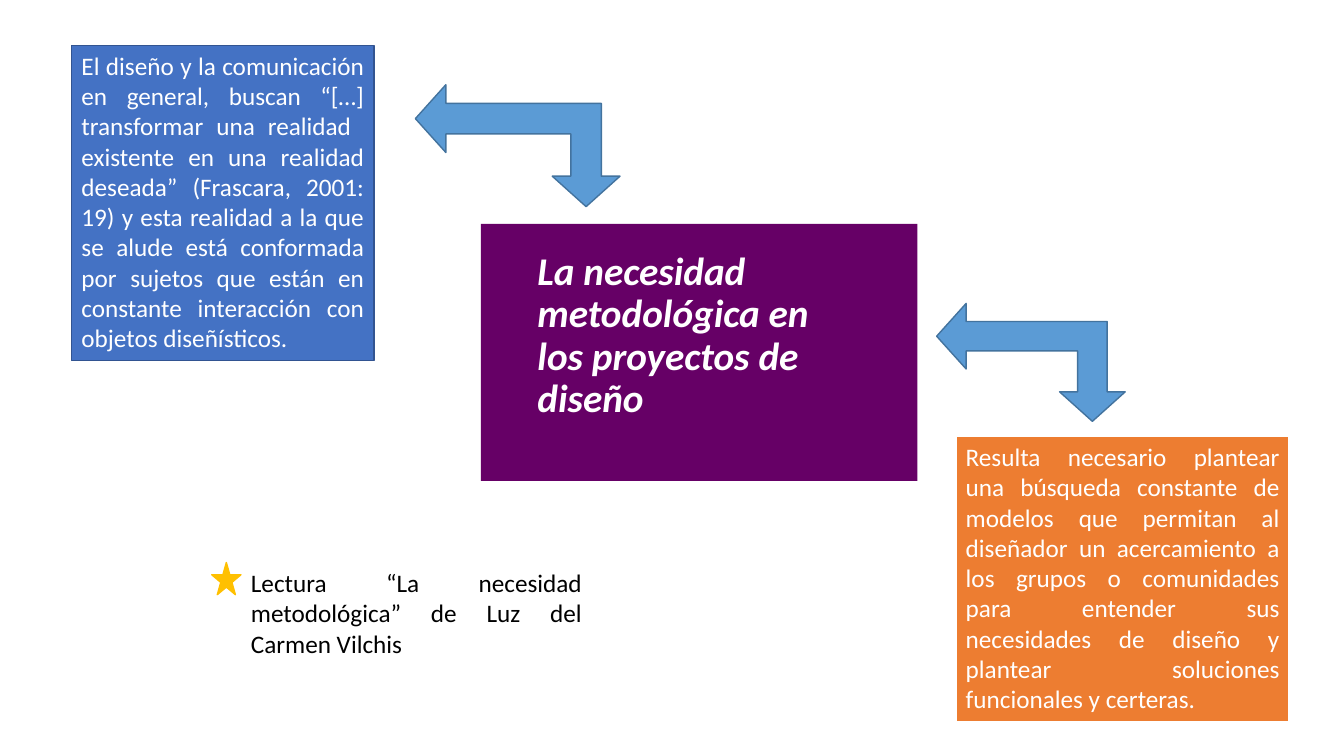
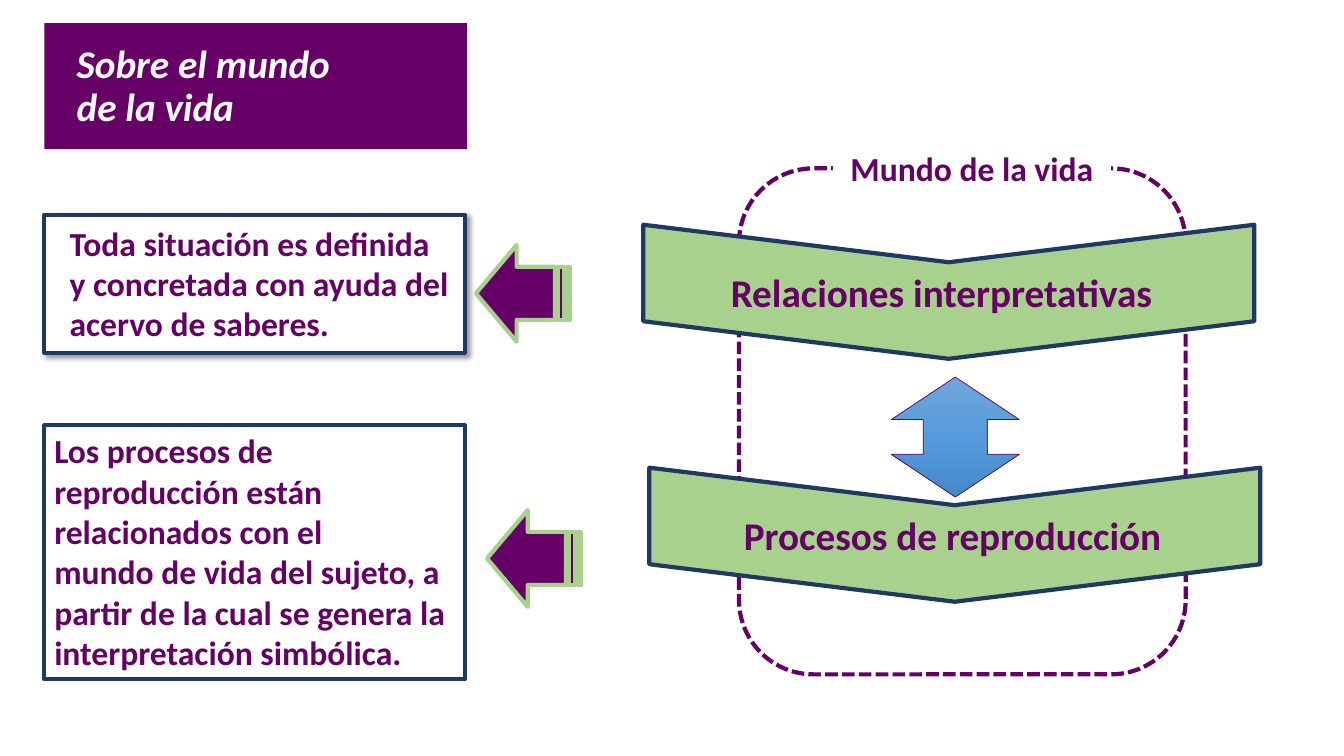
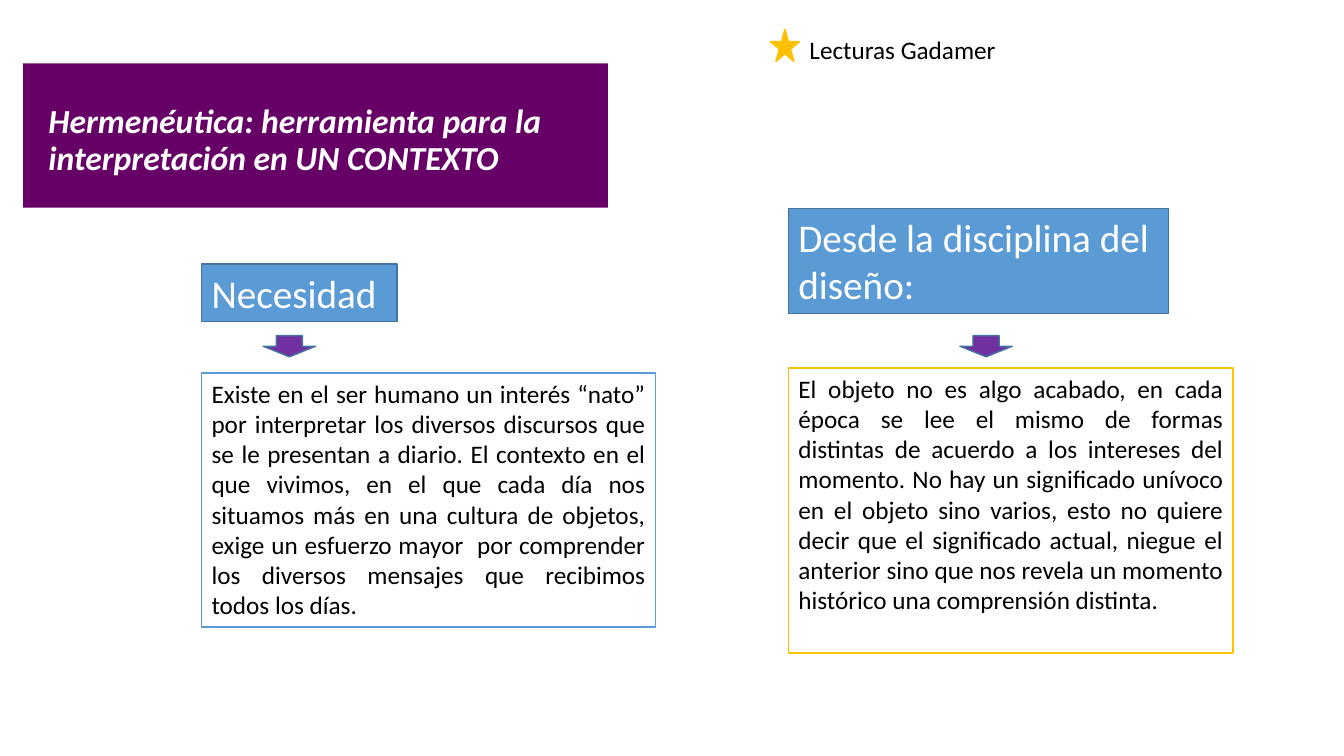
from copy import deepcopy

from lxml import etree
from pptx import Presentation
from pptx import util as u
from pptx.dml.color import RGBColor
from pptx.enum import dml, shapes, text
from pptx.oxml import ns, parse_xml

PX = 9144  # EMU in one px, 100 px to the inch
FONT = "Calibri"
INSET_X, INSET_Y = 10, 5
COLORS = {
    "purple": "660066", "violet": "7030A0", "white": "FFFFFF", "black": "000000",
    "royal": "4472C4", "royal_edge": "325491", "blue": "5B9BD5", "blue_edge": "43739E",
    "navy": "203864", "orange": "ED7D31", "gold": "FFC000", "green": "A9D18E",
    "sky_top": "71A6DB", "sky_middle": "559BDB", "sky_bottom": "448ACA",
}
SHAPE = shapes.MSO_SHAPE
LEFT, CENTER, JUSTIFY = text.PP_ALIGN.LEFT, text.PP_ALIGN.CENTER, text.PP_ALIGN.JUSTIFY


def px(*lengths):
    return [u.Emu(length * PX) for length in lengths]


def rgb(name):
    return RGBColor.from_string(COLORS[name])


def add_shape(slide, kind, box, fill=None, line=None, width=1, adjust=(), rotation=0):
    """Place a preset shape so that, after its rotation, it covers the box."""
    left, top, wide, high = px(*box)
    if rotation in (90, 270):
        left, top = left + (wide - high) // 2, top + (high - wide) // 2
        wide, high = high, wide
    shape = slide.shapes.add_shape(kind, left, top, wide, high)
    shape.rotation = rotation
    shape.shadow.inherit = False
    for index, value in enumerate(adjust):
        shape.adjustments[index] = value
    if fill:
        shape.fill.solid()
        shape.fill.fore_color.rgb = rgb(fill)
    else:
        shape.fill.background()
    if line:
        shape.line.color.rgb = rgb(line)
        shape.line.width = u.Pt(width)
    else:
        shape.line.fill.background()
    return shape


def write(shape, content, size, color, bold=False, italic=False, align=LEFT,
          anchor=text.MSO_ANCHOR.TOP, spacing=1.0,
          insets=(INSET_X, INSET_Y, INSET_X, INSET_Y)):
    frame = shape.text_frame
    frame.text = content
    frame.word_wrap = True
    frame.auto_size = text.MSO_AUTO_SIZE.NONE
    frame.vertical_anchor = anchor
    (frame.margin_left, frame.margin_top,
     frame.margin_right, frame.margin_bottom) = px(*insets)
    for paragraph in frame.paragraphs:
        paragraph.alignment = align
        paragraph.line_spacing = spacing
        for run in paragraph.runs:
            run.font.name = FONT
            run.font.size = u.Pt(size)
            run.font.bold = bold
            run.font.italic = italic
            run.font.color.rgb = rgb(color)


def add_label(slide, box, content, size, color, **style):
    write(slide.shapes.add_textbox(*px(*box)), content, size, color, **style)


def add_titled_slide(presentation, content, size, band, area):
    """Add a slide whose title fills the band and keeps its text in the area."""
    slide = presentation.slides.add_slide(presentation.slide_layouts[5])
    title = slide.shapes.title
    title.left, title.top, title.width, title.height = px(*band)
    title.fill.solid()
    title.fill.fore_color.rgb = rgb("purple")
    left, top = area[0] - band[0], area[1] - band[1]
    insets = (left + INSET_X, top + INSET_Y,
              band[2] - left - area[2] + INSET_X, band[3] - top - area[3] + INSET_Y)
    write(title, content, size, "white", bold=True, italic=True, spacing=0.9,
          anchor=text.MSO_ANCHOR.MIDDLE, insets=insets)
    return slide


def add_card(slide, box, content, size, color, fill, line, width=1, **style):
    card = add_shape(slide, SHAPE.RECTANGLE, box, fill, line, width)
    write(card, content, size, color, **style)
    return card


def add_reading(slide, left, top, height, content):
    """Add a reading reference marked with a star."""
    add_label(slide, (left + 29, top, 348, height), content, 18, "black", align=JUSTIFY)
    add_shape(slide, SHAPE.STAR_5_POINT, (left, top, 29, 32), "gold", "gold")


def add_banner(slide, left, top, indent, content):
    """Add a chevron pointing down with a caption indented from its left edge."""
    add_shape(slide, SHAPE.CHEVRON, (left, top, 606, 133), "green", "navy", 3,
              adjust=[0.28], rotation=90)
    add_label(slide, (left + indent, top + 38, 457, 57), content, 28, "purple", bold=True)


def add_column(slide, heading_box, heading, arrow_left, body_box, body, edge):
    """Add a heading, a down arrow and the text it leads to."""
    add_card(slide, heading_box, heading, 28, "white", "blue", "blue_edge")
    add_shape(slide, SHAPE.DOWN_ARROW, (arrow_left, 333, 52, 21), "violet", "blue_edge")
    add_card(slide, body_box, body, 18, "black", "white", edge, align=JUSTIFY)


def add_card_shadow(card):
    effects = card._element.spPr.find(ns.qn("a:effectLst"))
    effects.append(parse_xml(
        f'<a:outerShdw {ns.nsdecls("a")} blurRad="{u.Pt(4)}" dist="{u.Pt(3)}" '
        f'dir="2700000" algn="tl" rotWithShape="0"><a:srgbClr val="{COLORS["black"]}">'
        '<a:alpha val="40000"/></a:srgbClr></a:outerShdw>'))


def set_named_guides(shape, **guides):
    """Set adjustments by name, where python-pptx does not list them one to one."""
    guide_list = shape._element.spPr.find(".//" + ns.qn("a:avLst"))
    for guide in list(guide_list):
        guide_list.remove(guide)
    for name, value in guides.items():
        etree.SubElement(guide_list, ns.qn("a:gd"), name=name, fmla=f"val {value}")


def fill_with_sky(shape):
    """Fill with a three-stop gradient from top to bottom."""
    shape.fill.gradient()
    shape.fill.gradient_angle = 270
    stops = shape._element.spPr.find(".//" + ns.qn("a:gsLst"))
    stops.insert(1, deepcopy(stops[0]))
    names = ("sky_top", "sky_middle", "sky_bottom")
    for index, (stop, name) in enumerate(zip(shape.fill.gradient_stops, names)):
        stop.color.rgb = rgb(name)
        stop.position = index / 2


def build_need_slide(presentation):
    slide = add_titled_slide(
        presentation, "La necesidad metodológica en los proyectos de diseño", 28,
        (477, 222, 433, 255), (523, 222, 321, 223))
    add_card(
        slide, (71, 45, 300, 313),
        "El diseño y la comunicación en general, buscan “[…] transformar una realidad  "
        "existente en una realidad deseada” (Frascara, 2001: 19) y esta realidad a la que "
        "se alude está conformada por sujetos que están en constante interacción con "
        "objetos diseñísticos.", 18, "white", "royal", "royal_edge", align=JUSTIFY)
    add_card(
        slide, (948, 433, 331, 283),
        "Resulta necesario plantear una búsqueda constante de modelos que permitan al "
        "diseñador un acercamiento a los grupos o comunidades para entender sus "
        "necesidades de diseño y plantear soluciones funcionales y certeras.",
        18, "white", "orange", "white", 1.5, align=JUSTIFY)
    for box in ((412, 84, 203, 121), (929, 301, 187, 117)):
        add_shape(slide, SHAPE.LEFT_UP_ARROW, box, "blue", "blue_edge",
                  adjust=[0.25, 0.278, 0.25], rotation=270)
    add_reading(slide, 210, 558, 101,
                "Lectura “La necesidad metodológica” de Luz del Carmen Vilchis")


def build_life_world_slide(presentation):
    slide = add_titled_slide(presentation, "Sobre el mundo\nde la vida", 28,
                             (44, 23, 419, 125), (66, 39, 370, 95))
    frame = add_shape(slide, SHAPE.ROUNDED_RECTANGLE, (733, 167, 443, 502),
                      line="purple", width=3)
    frame.line.dash_style = dml.MSO_LINE.SQUARE_DOT

    card_style = dict(size=24, color="purple", fill="white", line="navy", width=3, bold=True)
    situation = add_card(
        slide, (44, 213, 417, 137),
        "Toda situación es definida y concretada con ayuda del acervo de saberes.",
        insets=(25, 8, 15, 8), **card_style)
    add_card_shadow(situation)
    add_card(
        slide, (44, 422, 417, 252),
        "Los procesos de reproducción están relacionados con el\n"
        "mundo de vida del sujeto, a partir de la cual se genera la interpretación "
        "simbólica.", **card_style)
    for left, top in ((472, 243), (483, 506)):
        add_shape(slide, SHAPE.STRIPED_RIGHT_ARROW, (left, top, 93, 96), "purple",
                  "green", 3, adjust=[0.55, 0.434], rotation=180)

    add_banner(slide, 638, 223, 77, "Relaciones interpretativas")
    exchange = add_shape(slide, SHAPE.UP_DOWN_ARROW, (884, 374, 127, 119),
                         line="purple", width=0.5)
    set_named_guides(exchange, adj1=50000, adj2=35500)
    fill_with_sky(exchange)
    add_banner(slide, 644, 464, 84, "Procesos de reproducción")
    add_card(slide, (826, 142, 276, 50), "Mundo de la vida", 24, "purple", "white", None,
             bold=True, align=CENTER)


def build_hermeneutics_slide(presentation):
    slide = add_titled_slide(
        presentation, "Hermenéutica: herramienta para la interpretación en UN CONTEXTO",
        24, (23, 63, 580, 143), (38, 80, 547, 120))
    add_column(
        slide, (200, 262, 194, 57), "Necesidad", 261, (200, 370, 450, 252),
        "Existe en el ser humano un interés “nato” por interpretar los diversos discursos "
        "que se le presentan a diario. El contexto en el que vivimos, en el que cada día "
        "nos situamos más en una cultura de objetos, exige un esfuerzo mayor  por "
        "comprender los diversos mensajes que recibimos todos los días.", "blue")
    add_column(
        slide, (782, 207, 377, 104), "Desde la disciplina del diseño:", 952,
        (782, 365, 441, 283),
        "El objeto no es algo acabado, en cada época se lee el mismo de formas distintas "
        "de acuerdo a los intereses del momento. No hay un significado unívoco en el "
        "objeto sino varios, esto no quiere decir que el significado actual, niegue el "
        "anterior sino que nos revela un momento histórico una comprensión distinta.",
        "gold")
    add_reading(slide, 764, 29, 40, "Lecturas Gadamer")


def main():
    presentation = Presentation()
    presentation.slide_width, presentation.slide_height = px(1333, 750)
    build_need_slide(presentation)
    build_life_world_slide(presentation)
    build_hermeneutics_slide(presentation)
    presentation.save("out.pptx")


if __name__ == "__main__":
    main()
